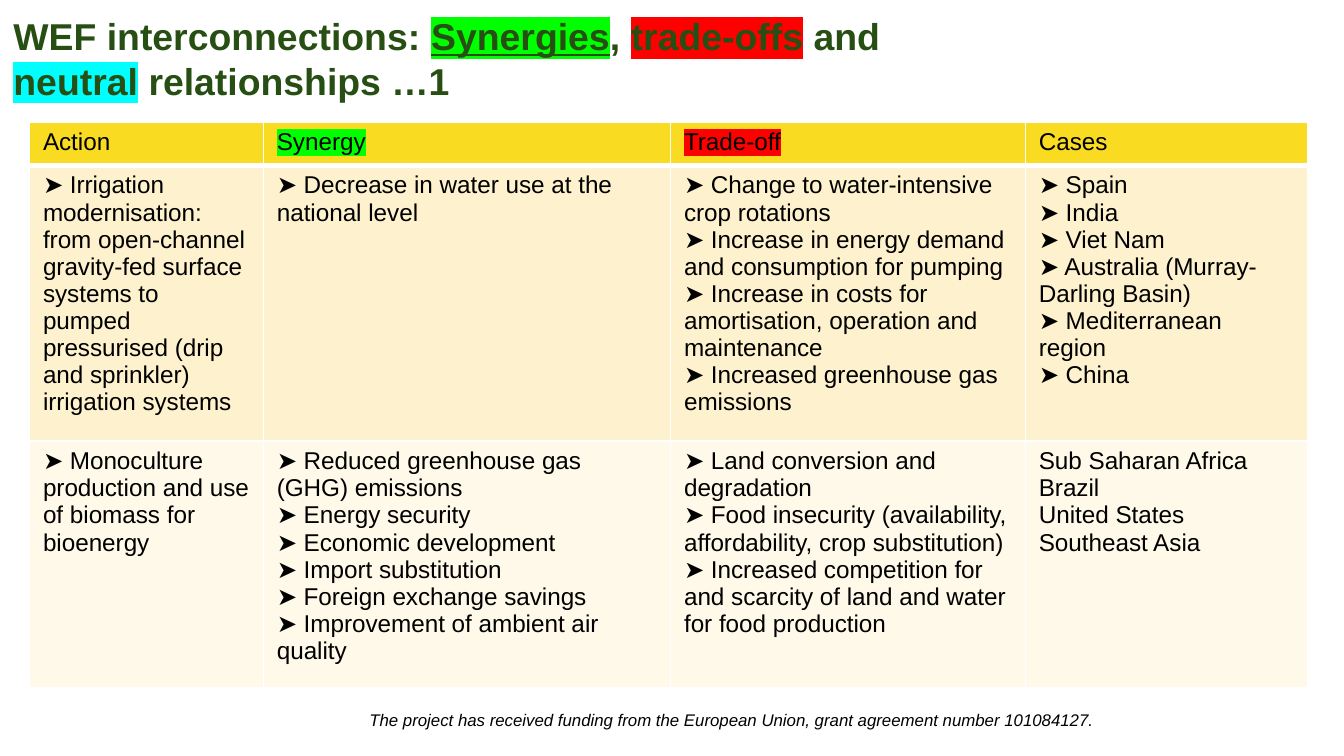
"""Build the slide on synergies and trade-offs between water, energy and food."""
from lxml.etree import SubElement
from pptx import Presentation
from pptx.dml.color import RGBColor
from pptx.enum.text import MSO_ANCHOR, MSO_AUTO_SIZE, PP_ALIGN
from pptx.oxml.ns import qn
from pptx.util import Inches, Pt

COLORS = {
    "title": "274E13", "text": "000000", "line": "FFFFFF",
    "synergy": "00FF00", "trade-off": "FF0000", "neutral": "00FFFF",
    "header": "F9DC21", "odd": "FDF2CD", "even": "FEF9E8",
}
FORMATS = {
    "title": {"size": Pt(20), "bold": True},
    "table": {"size": Pt(13), "bold": False},
    "footer": {"size": Pt(9), "italic": True},
}


def add_run(paragraph, text, style, color="text", highlight=None):
    run = paragraph.add_run()
    run.text = text
    run.font.name = "Arial"
    run.font.color.rgb = RGBColor.from_string(COLORS[color])
    for name, value in FORMATS[style].items():
        setattr(run.font, name, value)
    if highlight:
        properties = run.font._element
        mark = SubElement(properties, qn("a:highlight"))
        SubElement(mark, qn("a:srgbClr"), val=COLORS[highlight])
        properties.find(qn("a:solidFill")).addnext(mark)
    return run


def set_frame(frame, auto_size):
    frame.word_wrap = True
    frame.auto_size = auto_size
    frame.vertical_anchor = MSO_ANCHOR.TOP
    for side in ("left", "top", "right", "bottom"):
        setattr(frame, f"margin_{side}", Inches(0.1))


presentation = Presentation()
presentation.slide_width = Inches(10)
presentation.slide_height = Inches(10) * 9 // 16
slide = presentation.slides.add_slide(presentation.slide_layouts[5])

footer = slide.shapes.add_textbox(Inches(2.65), Inches(5.19), Inches(6.13), Inches(0.35))
set_frame(footer.text_frame, MSO_AUTO_SIZE.SHAPE_TO_FIT_TEXT)
paragraph = footer.text_frame.paragraphs[0]
paragraph.line_spacing = 1.08
paragraph.space_after = Pt(8)
add_run(paragraph, "The project has received funding from the European Union, "
        "grant agreement number 101084127.", "footer")

title = slide.shapes.title
title.left, title.top = Inches(0), Inches(0)
title.width, title.height = Inches(6.89), Inches(0.76)
set_frame(title.text_frame, MSO_AUTO_SIZE.NONE)
paragraph = title.text_frame.paragraphs[0]
paragraph.alignment = PP_ALIGN.LEFT
for text, highlight in [
    ("WEF interconnections: ", None), ("Synergies", "synergy"), (", ", None),
    ("trade-offs", "trade-off"), (" and ", None), ("neutral", "neutral"),
    (" relationships …1", None),
]:
    run = add_run(paragraph, text, "title", "title", highlight)
    run.font.underline = highlight == "synergy"

rows = [
    [["Action"], ["Synergy"], ["Trade-off"], ["Cases"]],
    [
        ["➤ Irrigation modernisation: from open-channel gravity-fed surface systems "
         "to pumped pressurised (drip and sprinkler) irrigation systems"],
        ["➤ Decrease in water use at the national level"],
        ["➤ Change to water-intensive crop rotations",
         "➤ Increase in energy demand and consumption for pumping",
         "➤ Increase in costs for amortisation, operation and maintenance",
         "➤ Increased greenhouse gas emissions"],
        ["➤ Spain", "➤ India", "➤ Viet Nam", "➤ Australia (Murray-Darling Basin)",
         "➤ Mediterranean region", "➤ China"],
    ],
    [
        ["➤ Monoculture production and use of biomass for bioenergy"],
        ["➤ Reduced greenhouse gas (GHG) emissions", "➤ Energy security",
         "➤ Economic development", "➤ Import substitution",
         "➤ Foreign exchange savings", "➤ Improvement of ambient air quality"],
        ["➤ Land conversion and degradation",
         "➤ Food insecurity (availability, affordability, crop substitution)",
         "➤ Increased competition for and scarcity of land and water for food production"],
        ["Sub Saharan Africa", "Brazil", "United States", "Southeast Asia"],
    ],
]
column_widths = [1.74, 3.03, 2.64, 2.1]
row_heights = [0.32, 2.05, 1.83]
row_fills = ["header", "odd", "even"]
table = slide.shapes.add_table(
    len(rows), len(column_widths), Inches(0.22), Inches(0.91),
    Inches(sum(column_widths)), Inches(sum(row_heights))).table
for column, width in zip(table.columns, column_widths):
    column.width = Inches(width)
for row, height in zip(table.rows, row_heights):
    row.height = Inches(height)

for row_index, row in enumerate(rows):
    for column_index, lines in enumerate(row):
        cell = table.cell(row_index, column_index)
        properties = cell._tc.get_or_add_tcPr()
        for side in "LRTB":
            is_header_rule = (row_index, side) in [(0, "B"), (1, "T")]
            line_width = Pt(3 if is_header_rule else 1)
            line = SubElement(properties, qn(f"a:ln{side}"), w=str(line_width))
            fill = SubElement(line, qn("a:solidFill"))
            SubElement(fill, qn("a:srgbClr"), val=COLORS["line"])
        cell.fill.solid()
        cell.fill.fore_color.rgb = RGBColor.from_string(COLORS[row_fills[row_index]])
        for index, text in enumerate(lines):
            frame = cell.text_frame
            paragraph = frame.add_paragraph() if index else frame.paragraphs[0]
            highlight = text.lower() if text.lower() in ("synergy", "trade-off") else None
            add_run(paragraph, text, "table", highlight=highlight)

presentation.save("out.pptx")
